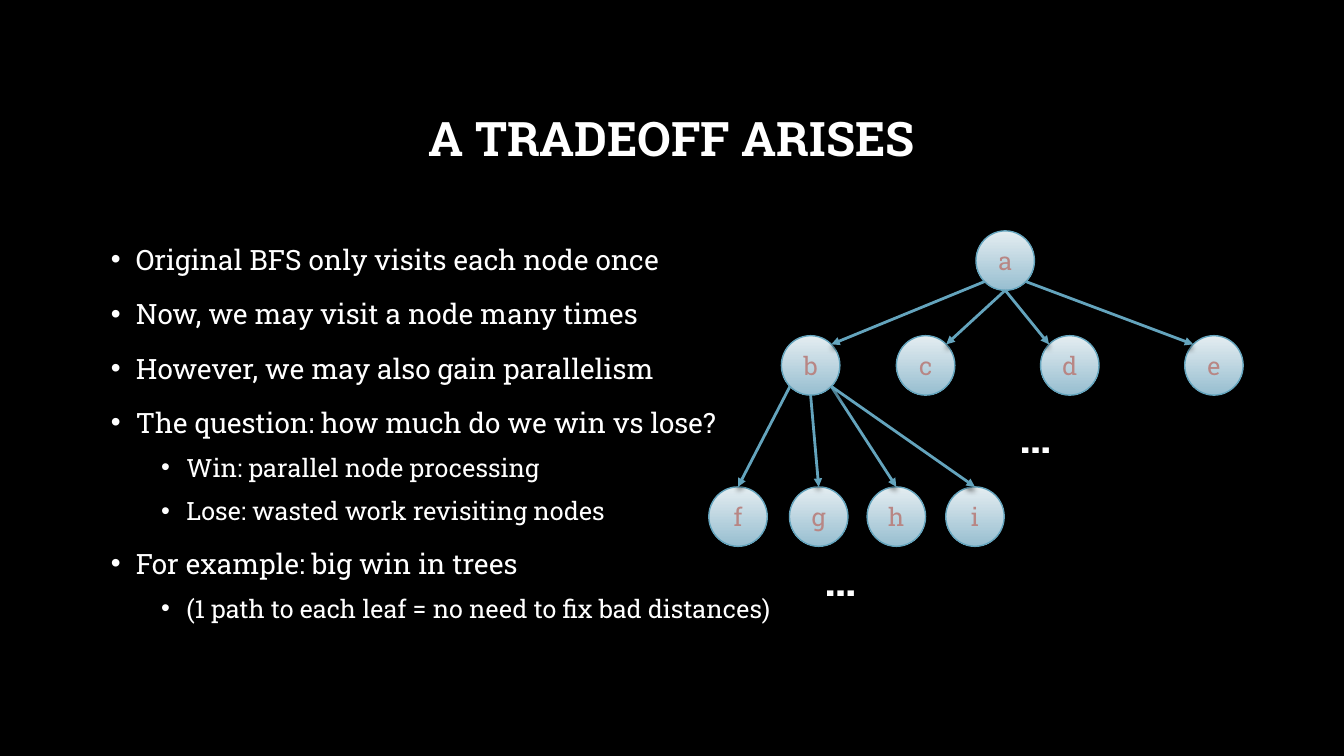
from math import cos, radians, sin

from lxml.etree import SubElement
from pptx import Presentation
from pptx.dml.color import RGBColor
from pptx.enum.shapes import MSO_CONNECTOR, MSO_SHAPE
from pptx.enum.text import MSO_ANCHOR as ANCHOR, MSO_AUTO_SIZE, PP_ALIGN as ALIGN
from pptx.oxml.ns import qn
from pptx.util import Inches, Pt

BLACK = RGBColor(0x00, 0x00, 0x00)
WHITE = RGBColor(0xFF, 0xFF, 0xFF)
ROSE = RGBColor(0xB8, 0x86, 0x84)
BLUE = RGBColor(0x64, 0xA4, 0xBD)
NODE_TOP = RGBColor(0xE4, 0xED, 0xF1)
NODE_BOTTOM = RGBColor(0x97, 0xBE, 0xD0)
FONT = "Roboto Slab"

TITLE = "A TRADEOFF ARISES"
BULLETS = [
    (0, "Original BFS only visits each node once"),
    (0, "Now, we may visit a node many times"),
    (0, "However, we may also gain parallelism"),
    (0, "The question: how much do we win vs lose?"),
    (1, "Win: parallel node processing"),
    (1, "Lose: wasted work revisiting nodes"),
    (0, "For example: big win in trees"),
    (1, "(1 path to each leaf = no need to fix bad distances)"),
]
LEVELS = [
    {"size": 20, "before": 10, "indent": 0.25},
    {"size": 18, "before": 5, "indent": 0.75},
]
TREE_ROWS = [
    (2.29, {"a": 9.68}),
    (3.33, {"b": 7.75, "c": 8.89, "d": 10.32, "e": 11.75}),
    (4.83, {"f": 7.03, "g": 7.83, "h": 8.6, "i": 9.38}),
]
NODE_W, NODE_H = 0.58, 0.59
TOP, TOP_RIGHT, TOP_LEFT = 270, 315, 225
BOTTOM, BOTTOM_RIGHT, BOTTOM_LEFT = 90, 45, 135
EDGES = [
    ("a", BOTTOM_LEFT, "b", TOP_RIGHT),
    ("a", BOTTOM, "c", TOP_RIGHT),
    ("a", BOTTOM, "d", TOP_LEFT),
    ("a", BOTTOM_RIGHT, "e", TOP_LEFT),
    ("b", BOTTOM_LEFT, "f", TOP),
    ("b", BOTTOM, "g", TOP),
    ("b", BOTTOM_RIGHT, "h", TOP),
    ("b", BOTTOM_RIGHT, "i", TOP),
]
ELLIPSES = [(10.01, 4.01), (8.08, 5.42)]


def add_text(p, text, size=18, color=WHITE, bold=False, align=None,
             spacing=None, before=None):
    p.alignment = align
    p.line_spacing = spacing
    if before is not None:
        p.space_before = Pt(before)
    r = p.add_run()
    r.text = text
    r.font.name = FONT
    r.font.size = Pt(size)
    r.font.bold = bold
    r.font.color.rgb = color


def add_box(slide, left, top, width, height, anchor=ANCHOR.TOP):
    sp = slide.shapes.add_textbox(*map(Inches, (left, top, width, height)))
    tf = sp.text_frame
    tf.word_wrap = True
    tf.vertical_anchor = anchor
    return tf


def add_bullet(p, indent):
    pPr = p._p.get_or_add_pPr()
    pPr.set("marL", str(Inches(indent)))
    pPr.set("indent", str(Inches(-0.25)))
    SubElement(pPr, qn("a:buFont"), typeface="Arial")
    SubElement(pPr, qn("a:buChar"), char="•")


def add_node(slide, label, left, top):
    sp = slide.shapes.add_shape(
        MSO_SHAPE.OVAL, *map(Inches, (left, top, NODE_W, NODE_H)))
    sp.shadow.inherit = False
    sp.fill.gradient()
    sp.fill.gradient_angle = 270
    for stop, color in zip(sp.fill.gradient_stops, (NODE_TOP, NODE_BOTTOM)):
        stop.color.rgb = color
    sp.line.color.rgb = BLUE
    sp.line.width = Pt(1)
    tf = sp.text_frame
    tf.word_wrap = False
    tf.vertical_anchor = ANCHOR.MIDDLE
    add_text(tf.paragraphs[0], label, color=ROSE, align=ALIGN.CENTER)
    return sp


def rim_point(sp, angle):
    a = radians(angle)
    return (int(sp.left + sp.width / 2 * (1 + cos(a))),
            int(sp.top + sp.height / 2 * (1 + sin(a))))


def add_edge(slide, parent, start, child, end):
    line = slide.shapes.add_connector(
        MSO_CONNECTOR.STRAIGHT, *rim_point(parent, start), *rim_point(child, end))
    if end == TOP:
        line.end_connect(child, 0)
    line.line.color.rgb = BLUE
    line.line.width = Pt(2)
    SubElement(line.line._get_or_add_ln(), qn("a:tailEnd"), type="triangle")
    effects = SubElement(line._element.spPr, qn("a:effectLst"))
    shadow = SubElement(effects, qn("a:outerShdw"), blurRad=str(Pt(4)),
                        dist=str(Pt(3)), dir="5400000", rotWithShape="0")
    black = SubElement(shadow, qn("a:srgbClr"), val=str(BLACK))
    SubElement(black, qn("a:alpha"), val="54000")


def main():
    prs = Presentation()
    prs.slide_width, prs.slide_height = Inches(13.33), Inches(7.5)
    s = prs.slides.add_slide(prs.slide_layouts[6])
    s.background.fill.solid()
    s.background.fill.fore_color.rgb = BLACK

    tf = add_box(s, 1, 0.67, 11.32, 1.45, anchor=ANCHOR.MIDDLE)
    add_text(tf.paragraphs[0], TITLE, size=34, bold=True,
             align=ALIGN.CENTER, spacing=0.9)

    tf = add_box(s, 1, 2.29, 11.32, 4.04)
    for i, (level, text) in enumerate(BULLETS):
        p = tf.add_paragraph() if i else tf.paragraphs[0]
        p.level = level
        style = LEVELS[level]
        add_text(p, text, size=style["size"], spacing=1.2, before=style["before"])
        add_bullet(p, style["indent"])

    nodes = {label: add_node(s, label, left, top)
             for top, row in TREE_ROWS for label, left in row.items()}
    for parent, start, child, end in EDGES:
        add_edge(s, nodes[parent], start, nodes[child], end)

    for left, top in ELLIPSES:
        tf = add_box(s, left, top, 0.78, 0.64)
        tf.auto_size = MSO_AUTO_SIZE.SHAPE_TO_FIT_TEXT
        add_text(tf.paragraphs[0], "…", size=32, bold=True)

    prs.save("out.pptx")


if __name__ == "__main__":
    main()
